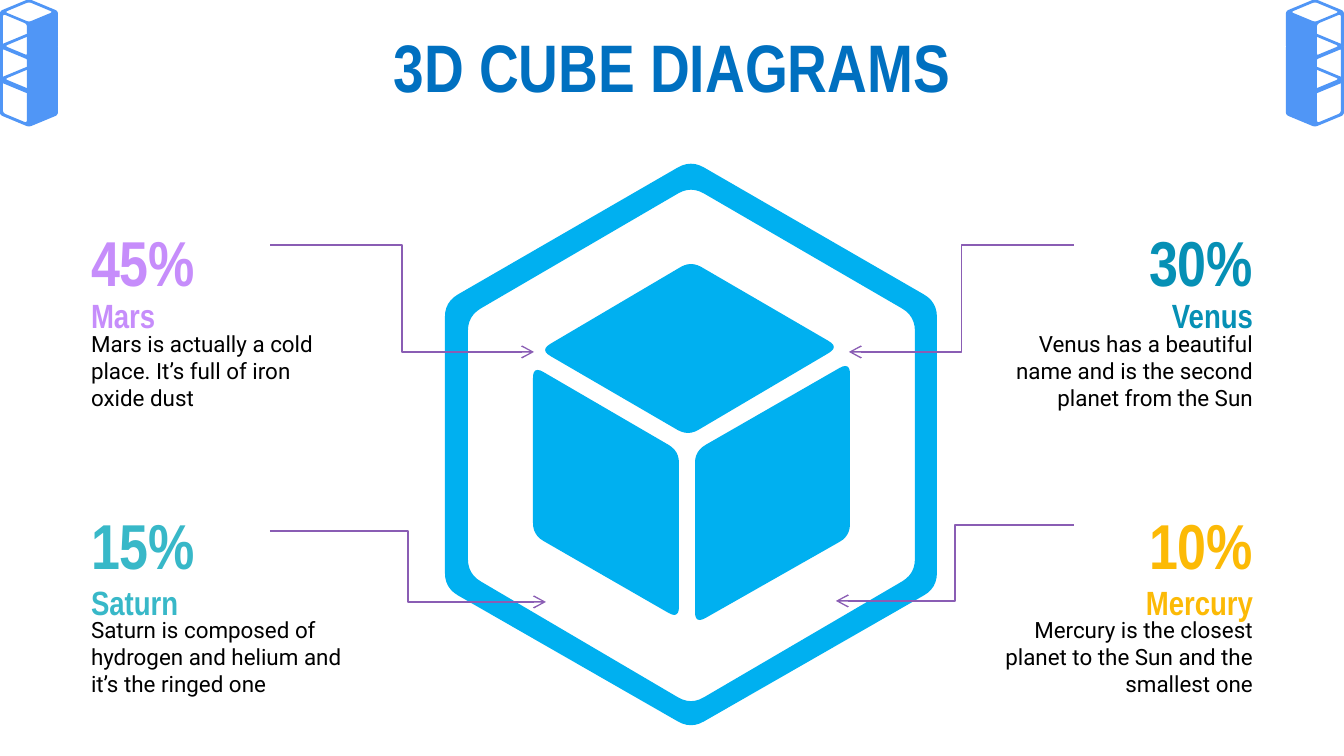
from lxml import etree
from pptx import Presentation
from pptx.dml.color import RGBColor
from pptx.enum.shapes import MSO_CONNECTOR
from pptx.enum.text import PP_ALIGN
from pptx.oxml.ns import qn
from pptx.util import Emu, Pt

ELBOW = MSO_CONNECTOR.ELBOW
LEFT, CENTER, RIGHT = PP_ALIGN.LEFT, PP_ALIGN.CENTER, PP_ALIGN.RIGHT

SCALE = 914400 / 134.4
PAGE_WIDTH, PAGE_HEIGHT = 1344, 756
INSET = 13
MARGIN = 78
HEADING_WIDTH, BODY_WIDTH = 192, 284
LINE_START = MARGIN + HEADING_WIDTH
CURVE_STEPS = 6

BLACK = RGBColor(0x00, 0x00, 0x00)
TITLE_BLUE = RGBColor(0x00, 0x70, 0xC0)
CUBE_BLUE = RGBColor(0x00, 0xB0, 0xF0)
ICON_BLUE = RGBColor(0x50, 0x96, 0xF6)
PURPLE = RGBColor(0x8A, 0x5D, 0xB4)
LILAC = RGBColor(0xC6, 0x8D, 0xFB)
TEAL = RGBColor(0x06, 0x90, 0xB5)
AQUA = RGBColor(0x38, 0xB8, 0xC8)
AMBER = RGBColor(0xFC, 0xBA, 0x06)

HEADING_FONT, BODY_FONT = "Arial Narrow", "Roboto"

FRAME = [
    [(691, 160), (937, 302), (937, 588), (691, 729), (445, 588), (445, 302)],
    [(691, 186), (915, 316), (915, 574), (691, 705), (468, 574), (468, 316)],
]
FACES = [
    [(695, 451), (850, 362), (850, 536), (695, 624)],
    [(691, 261), (839, 347), (688, 436), (540, 350)],
    [(533, 366), (679, 451), (679, 619), (533, 535)],
]
ICON_CUBE = [
    [(29, -1), (58, 11), (58, 48), (29, 60), (0, 48), (0, 11)],
    [(3, 14), (27, 24), (27, 56), (3, 46)],
    [(5, 12), (29, 2), (53, 12), (29, 22)],
]
ICON_TOPS = (0, 34, 67)

UPPER, LOWER = (199, 276, 317), (482, 563, 603)
PLANETS = [
    ("45%", "Mars", "Mars is actually a cold place. It’s full of iron oxide dust",
     LILAC, LEFT, UPPER, 245, (534, 352)),
    ("30%", "Venus", "Venus has a beautiful name and is the second planet from the Sun",
     TEAL, RIGHT, UPPER, 245, (849, 352)),
    ("15%", "Saturn", "Saturn is composed of hydrogen and helium and it’s the ringed one",
     AQUA, LEFT, LOWER, 531, (546, 602)),
    ("10%", "Mercury", "Mercury is the closest planet to the Sun and the smallest one",
     AMBER, RIGHT, LOWER, 525, (836, 601)),
]


def px(value):
    """Turn px into EMU."""
    return Emu(round(value * SCALE))


def rounded(corners, cut):
    """Return the points of a polygon whose corners are curved from cut px away."""
    points = []
    for index, (x, y) in enumerate(corners):
        ends = []
        for near_x, near_y in (corners[index - 1], corners[(index + 1) % len(corners)]):
            ratio = cut / ((near_x - x) ** 2 + (near_y - y) ** 2) ** 0.5
            ends.append((x + (near_x - x) * ratio, y + (near_y - y) * ratio))
        (start_x, start_y), (end_x, end_y) = ends
        for step in range(CURVE_STEPS + 1):
            t = step / CURVE_STEPS
            a, b, c = (1 - t) ** 2, 2 * t * (1 - t), t ** 2
            points.append((px(a * start_x + b * x + c * end_x),
                           px(a * start_y + b * y + c * end_y)))
    return points


class SlideBuilder:
    """Draws styled elements on the current slide."""

    def __init__(self, page):
        self.shapes = page.shapes

    def text(self, words, box, size, color, align, font=HEADING_FONT, spaced=False):
        frame = self.shapes.add_textbox(*map(px, box)).text_frame
        frame.word_wrap = True
        frame.margin_left = frame.margin_right = px(INSET)
        frame.margin_top = frame.margin_bottom = px(INSET)
        para = frame.paragraphs[0]
        para.text = words
        para.alignment = align
        if spaced:
            para.line_spacing = 1.15
            para.space_after = Pt(16)
        para.font.name = font
        para.font.size = Pt(size)
        para.font.bold = font == HEADING_FONT
        para.font.color.rgb = color

    def outline(self, contours, cut, color):
        first, *others = [rounded(corners, cut) for corners in contours]
        builder = self.shapes.build_freeform(*first[0])
        builder.add_line_segments(first[1:])
        for points in others:
            builder.move_to(*points[0])
            builder.add_line_segments(points[1:])
        shape = builder.convert_to_shape()
        shape.shadow.inherit = False
        shape.fill.solid()
        shape.fill.fore_color.rgb = color
        shape.line.fill.background()

    def arrow(self, start, end):
        connector = self.shapes.add_connector(ELBOW, *map(px, (*start, *end)))
        connector.line.color.rgb = PURPLE
        connector.line.width = Pt(0.75)
        properties = connector.element.spPr
        etree.SubElement(properties.find(qn("a:ln")), qn("a:tailEnd"), type="arrow")
        etree.SubElement(properties, qn("a:effectLst"))

    def planet(self, share, name, body, color, side, tops, line_top, target):
        on_left = side == LEFT
        heading_left = MARGIN if on_left else PAGE_WIDTH - MARGIN - HEADING_WIDTH
        body_left = MARGIN if on_left else PAGE_WIDTH - MARGIN - BODY_WIDTH
        share_top, name_top, body_top = tops
        self.text(body, (body_left, body_top, BODY_WIDTH, 85), 12, BLACK, side, BODY_FONT)
        self.text(share, (heading_left, share_top, HEADING_WIDTH, 90), 34, color, side, spaced=True)
        self.text(name, (heading_left, name_top, HEADING_WIDTH, 77), 18, color, side, spaced=True)
        self.arrow((LINE_START if on_left else PAGE_WIDTH - LINE_START, line_top), target)

    def icon(self, mirrored):
        for top in ICON_TOPS:
            cube = [[(PAGE_WIDTH - x if mirrored else x, y + top) for x, y in corners]
                    for corners in ICON_CUBE]
            self.outline(cube, 3, ICON_BLUE)


def main():
    deck = Presentation()
    deck.slide_width, deck.slide_height = px(PAGE_WIDTH), px(PAGE_HEIGHT)
    builder = SlideBuilder(deck.slides.add_slide(deck.slide_layouts[6]))
    builder.text("3D CUBE DIAGRAMS", (67, 12, 1210, 85), 36, TITLE_BLUE, CENTER)
    for mirrored in (False, True):
        builder.icon(mirrored)
    builder.outline(FRAME, 15, CUBE_BLUE)
    for face in FACES:
        builder.outline([face], 12, CUBE_BLUE)
    for planet in PLANETS:
        builder.planet(*planet)
    deck.save("out.pptx")


if __name__ == "__main__":
    main()
